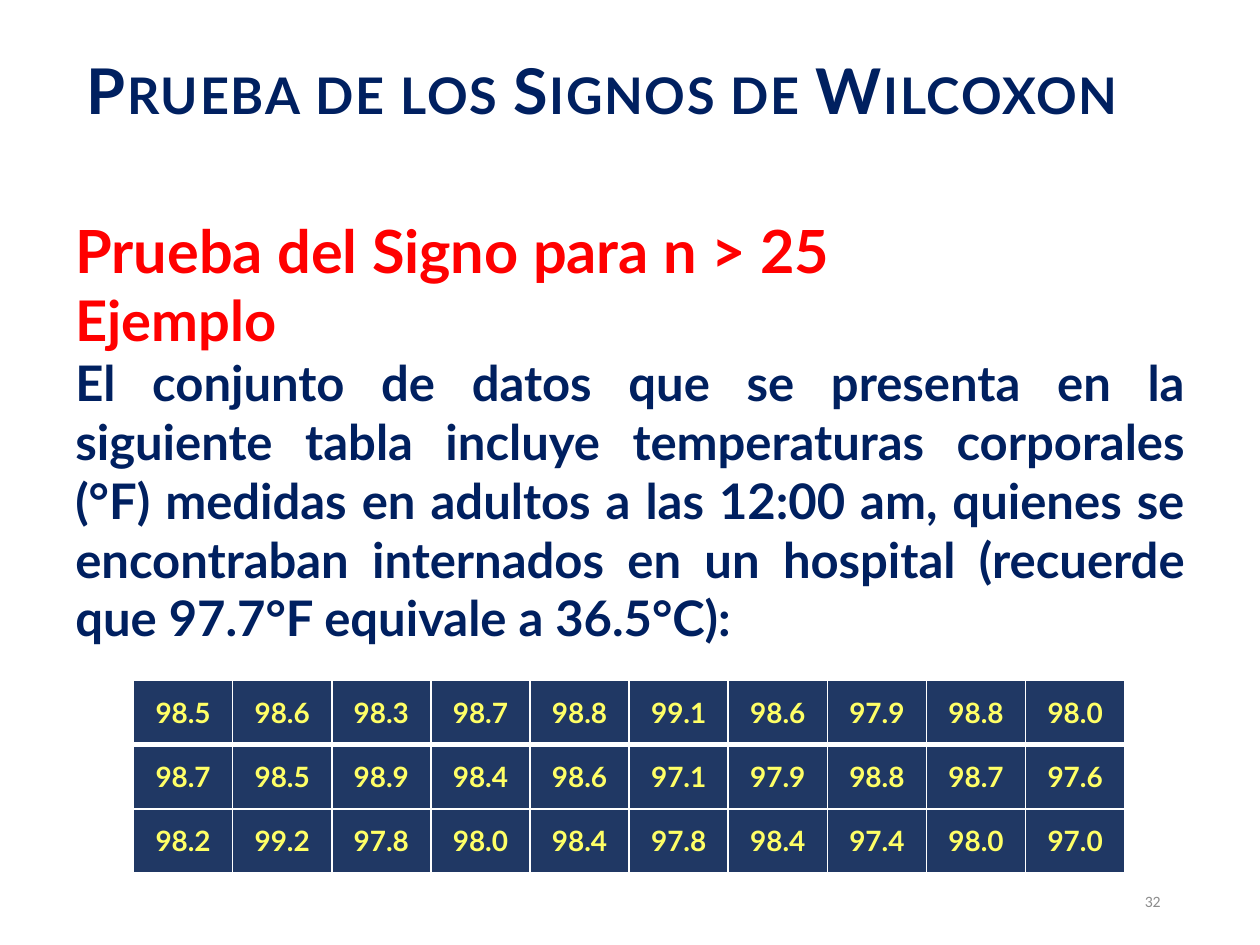
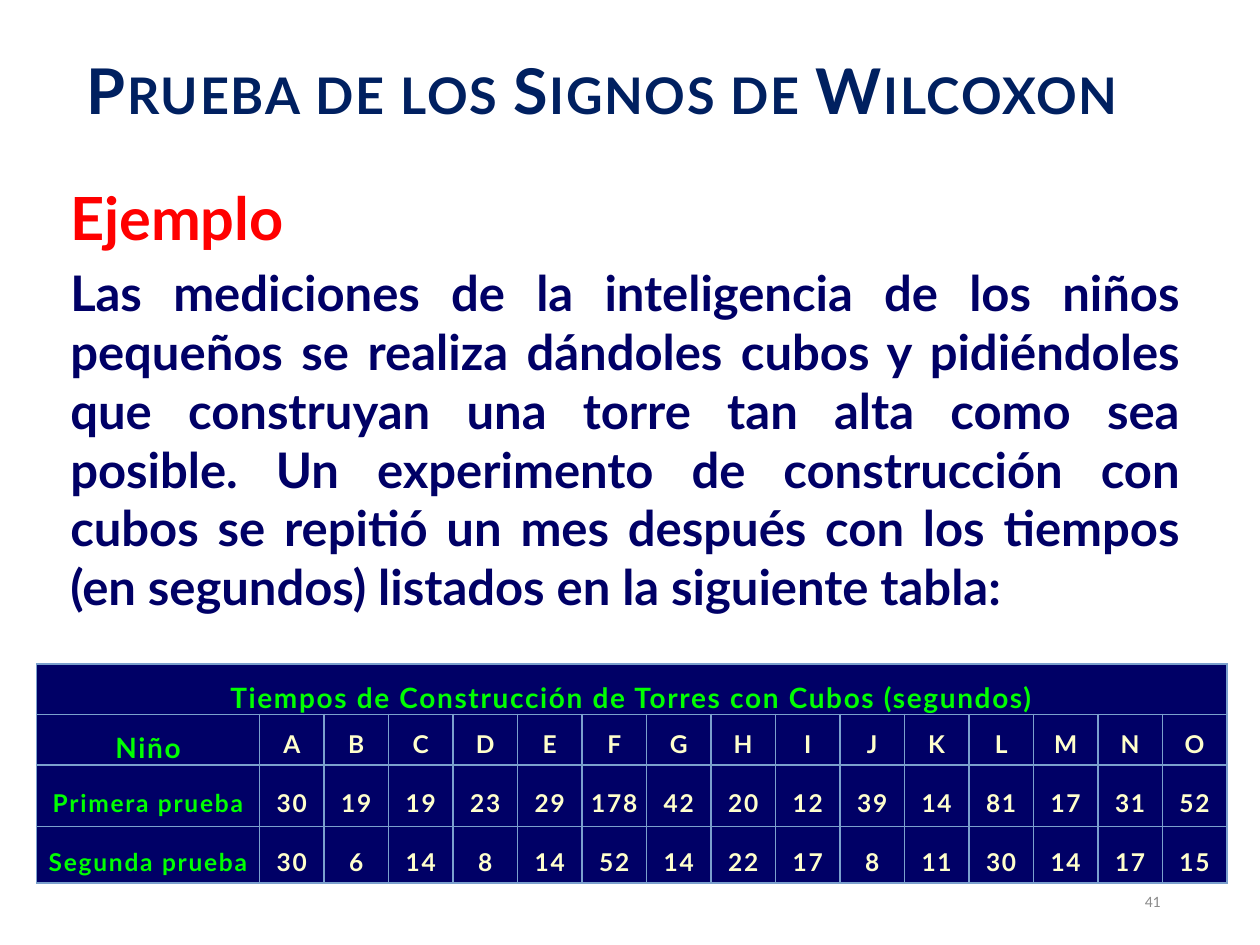
from dataclasses import dataclass
from typing import Optional

from lxml import etree
from pptx import Presentation
from pptx import util as u
from pptx.dml.color import RGBColor
from pptx.enum import text
from pptx.oxml import ns

# Slide size and grid: 20 columns by 15 rows
WIDTH, HEIGHT = u.Inches(10), u.Inches(7.5)
COLUMN, ROW = WIDTH / 20, HEIGHT / 15

# Colours
NAVY = RGBColor(0x00, 0x20, 0x60)
DEEP_BLUE = RGBColor(0x00, 0x00, 0x66)
SLATE = RGBColor(0x20, 0x38, 0x64)
RED = RGBColor(0xFF, 0x00, 0x00)
YELLOW = RGBColor(0xFF, 0xFF, 0x66)
CREAM = RGBColor(0xFF, 0xFF, 0xCC)
GREEN = RGBColor(0x00, 0xFF, 0x00)
SKY = RGBColor(0x7B, 0xA0, 0xCD)
GRAY = RGBColor(0x8C, 0x8C, 0x8C)
WHITE = RGBColor(0xFF, 0xFF, 0xFF)

ALIGN, ANCHOR = text.PP_ALIGN, text.MSO_ANCHOR


@dataclass(frozen=True)
class Area:
    """Place on the grid, in columns and rows."""
    left: float
    top: float
    width: float
    height: float

    def lengths(self) -> tuple[int, int, int, int]:
        return (round(self.left * COLUMN), round(self.top * ROW),
                round(self.width * COLUMN), round(self.height * ROW))


@dataclass(frozen=True)
class Style:
    size: float
    color: RGBColor
    align: text.PP_ALIGN = ALIGN.CENTER
    font: str = "Lato"
    bold: bool = True
    tracking: float = 0
    small_caps: bool = False
    outline: float = 0
    before: float = 0
    line_spacing: Optional[float] = None


@dataclass(frozen=True)
class Line:
    words: str
    style: Style


@dataclass(frozen=True)
class Grid:
    area: Area
    columns: list[float]
    rows: list[float]
    fill: RGBColor
    border: RGBColor
    cells: list[list[Line]]
    anchors: list[text.MSO_ANCHOR]
    tight: bool = False
    title_row: bool = False
    header_rule: float = 1


# Shared parts
TITLE_AREA = Area(1, 0.52, 18, 1.78)
NUMBER_AREA = Area(13.24, 13.9, 5.38, 0.8)
TITLE = Line("Prueba de los Signos de Wilcoxon",
             Style(36, NAVY, tracking=1, small_caps=True, outline=0.75))
NUMBER = Style(9, GRAY, ALIGN.RIGHT, "Calibri", bold=False)
HEADING = Style(34, RED, ALIGN.JUSTIFY)
SUBHEADING = Style(32, RED, ALIGN.JUSTIFY)


def add_line(parent, color: RGBColor, points: float, tag: str = "a:ln"):
    line = etree.SubElement(parent, ns.qn(tag), w=str(u.Pt(points)))
    fill = etree.SubElement(line, ns.qn("a:solidFill"))
    etree.SubElement(fill, ns.qn("a:srgbClr"), val=str(color))
    return line


def write(para, line: Line) -> None:
    style = line.style
    span = para.add_run()
    span.text = line.words
    para.alignment = style.align
    para.space_before = u.Pt(style.before)
    if style.line_spacing:
        para.line_spacing = style.line_spacing
    font = para.font
    font.name, font.size, font.bold = style.font, u.Pt(style.size), style.bold
    font.color.rgb = style.color
    # Tracking, small capitals and outline belong to the run
    marks = span._r.get_or_add_rPr()
    if style.tracking:
        marks.set("spc", str(round(style.tracking * 100)))
    if style.small_caps:
        marks.set("cap", "small")
    if style.outline:
        add_line(marks, style.color, style.outline)


def add_text(page, area: Area, lines: list[Line],
             anchor: text.MSO_ANCHOR = ANCHOR.TOP) -> None:
    frame = page.shapes.add_textbox(*area.lengths()).text_frame
    frame.word_wrap = True
    frame.vertical_anchor = anchor
    for index, line in enumerate(lines):
        write(frame.add_paragraph() if index else frame.paragraphs[0], line)


def add_grid(page, grid: Grid) -> None:
    shape = page.shapes.add_table(len(grid.rows), len(grid.columns),
                                  *grid.area.lengths())
    table = shape.table
    table.first_row = table.horz_banding = False
    for column, width in zip(table.columns, grid.columns):
        column.width = round(width * COLUMN)
    for row, height in zip(table.rows, grid.rows):
        row.height = round(height * ROW)
    if grid.title_row:
        table.cell(0, 0).merge(table.cell(0, len(grid.columns) - 1))
    for r in range(len(grid.rows)):
        for c in range(len(grid.columns)):
            cell = table.cell(r, c)
            cell.vertical_anchor = grid.anchors[r]
            if grid.tight:
                cell.margin_left = cell.margin_right = u.Inches(0.07)
                cell.margin_top = cell.margin_bottom = 0
            rules = {"a:lnL": 1, "a:lnR": 1,
                     "a:lnT": grid.header_rule if r == 1 else 1,
                     "a:lnB": grid.header_rule if r == 0 else 1}
            for tag, points in rules.items():
                add_line(cell._tc.get_or_add_tcPr(), grid.border, points, tag)
            cell.fill.solid()
            cell.fill.fore_color.rgb = grid.fill
            if c < len(grid.cells[r]):
                write(cell.text_frame.paragraphs[0], grid.cells[r][c])


def add_page(deck, number: int, body_area: Area, body: list[Line],
             grid: Grid) -> None:
    page = deck.slides.add_slide(deck.slide_layouts[6])
    add_text(page, body_area, body)
    add_text(page, TITLE_AREA, [TITLE], ANCHOR.MIDDLE)
    add_grid(page, grid)
    add_text(page, NUMBER_AREA, [Line(str(number), NUMBER)], ANCHOR.MIDDLE)


def temperature_grid() -> Grid:
    temperatures = [
        "98.5 98.6 98.3 98.7 98.8 99.1 98.6 97.9 98.8 98.0",
        "98.7 98.5 98.9 98.4 98.6 97.1 97.9 98.8 98.7 97.6",
        "98.2 99.2 97.8 98.0 98.4 97.8 98.4 97.4 98.0 97.0",
    ]
    value = Style(16, YELLOW)
    cells = [[Line(word, value) for word in row.split()]
             for row in temperatures]
    return Grid(Area(2.12, 10.8, 15.74, 3.06), [1.574] * 10, [1.02] * 3,
                SLATE, WHITE, cells, [ANCHOR.MIDDLE] * 3, header_rule=3)


def tower_grid() -> Grid:
    caption = Style(16, GREEN, tracking=1, line_spacing=1.5)
    label = Style(14, GREEN, tracking=1, line_spacing=1.5)
    value = Style(14, CREAM, tracking=1, line_spacing=1.5)
    records = [
        (Line("Niño", caption), "A B C D E F G H I J K L M N O"),
        (Line("Primera prueba", label),
         "30 19 19 23 29 178 42 20 12 39 14 81 17 31 52"),
        (Line("Segunda prueba", label),
         "30 6 14 8 14 52 14 22 17 8 11 30 14 17 15"),
    ]
    cells = [[Line("Tiempos de Construcción de Torres con Cubos (segundos)",
                   caption)]]
    cells += [[head] + [Line(word, value) for word in words.split()]
              for head, words in records]
    return Grid(Area(0.58, 10.54, 18.9, 3.48), [3.54] + [1.024] * 15,
                [0.68, 0.68, 0.98, 0.9], DEEP_BLUE, SKY, cells,
                [ANCHOR.TOP] * 2 + [ANCHOR.MIDDLE] * 2,
                tight=True, title_row=True)


def main() -> None:
    deck = Presentation()
    deck.slide_width, deck.slide_height = WIDTH, HEIGHT

    # Body temperatures
    add_page(deck, 32, Area(1, 3.3, 18, 7.52), [
        Line("Prueba del Signo para n > 25", HEADING),
        Line("Ejemplo", SUBHEADING),
        Line("El conjunto de datos que se presenta en la siguiente tabla "
             "incluye temperaturas corporales (°F) medidas en adultos a las "
             "12:00 am, quienes se encontraban internados en un hospital "
             "(recuerde que 97.7°F equivale a 36.5°C):",
             Style(28, NAVY, ALIGN.JUSTIFY)),
    ], temperature_grid())

    # Building towers with cubes
    add_page(deck, 41, Area(0.92, 2.78, 18, 7.72), [
        Line("Ejemplo", HEADING),
        Line("Las mediciones de la inteligencia de los niños pequeños se "
             "realiza dándoles cubos y pidiéndoles que construyan una torre "
             "tan alta como sea posible. Un experimento de construcción con "
             "cubos se repitió un mes después con los tiempos (en segundos) "
             "listados en la siguiente tabla:",
             Style(28, DEEP_BLUE, ALIGN.JUSTIFY, before=5.6)),
    ], tower_grid())

    deck.save("out.pptx")


if __name__ == "__main__":
    main()
